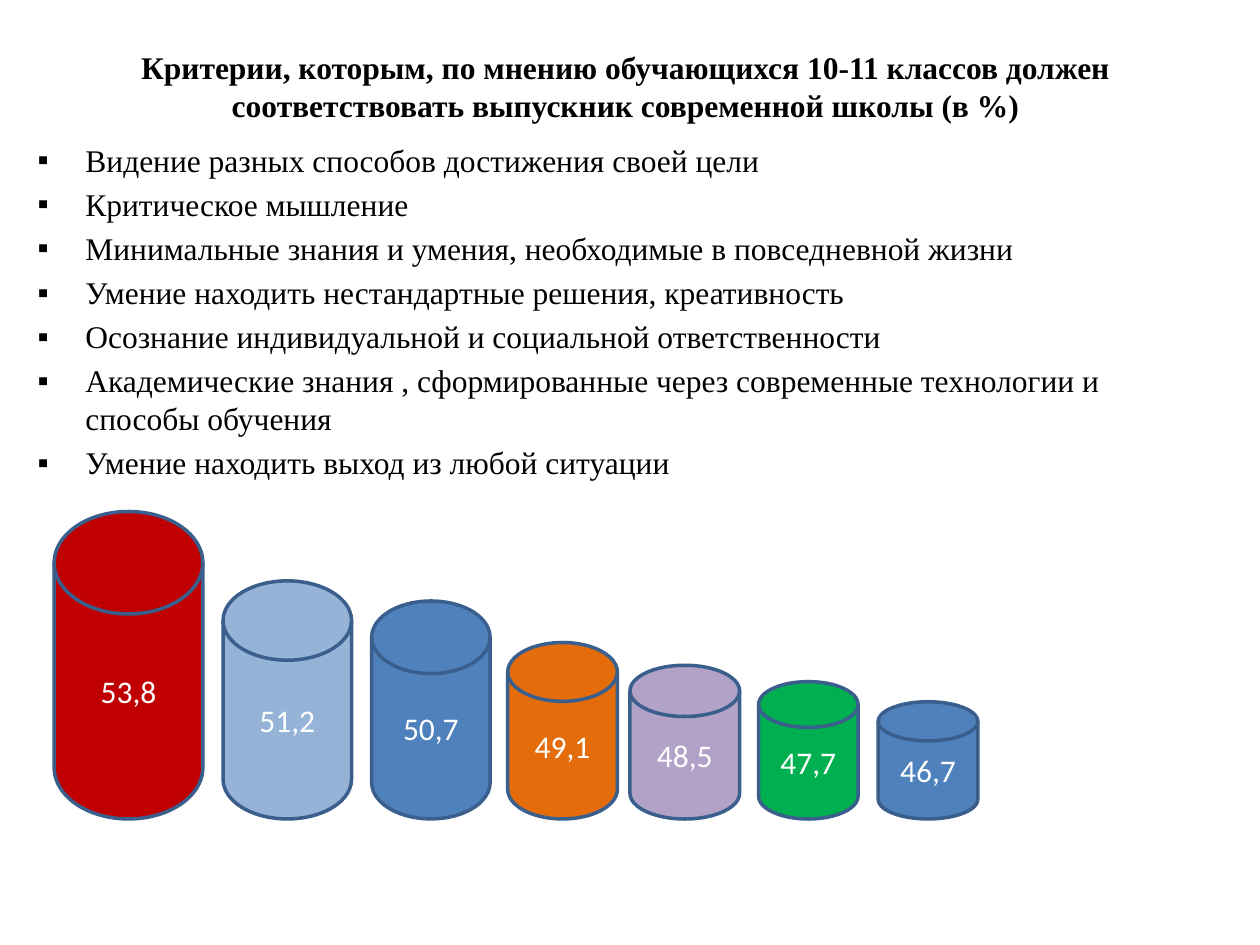
from dataclasses import dataclass
from lxml.etree import SubElement
from pptx import Presentation
from pptx.dml.color import RGBColor as RGB
from pptx.enum.shapes import MSO_SHAPE as Shape
from pptx.enum.text import MSO_ANCHOR as Anchor, PP_ALIGN as Align
from pptx.oxml.ns import qn
from pptx.util import Inches, Pt


@dataclass(frozen=True)
class Theme:
    ink: str = "000000"
    light: str = "FFFFFF"
    outline: str = "3A5F8C"
    serif: str = "Times New Roman"
    sans: str = "Calibri"
    size: int = 18
    line: int = 2
    space: float = 3.6


class Deck:
    """Builds slides on a grid of 100 columns by 75 rows."""

    def __init__(self, theme):
        self.theme = theme
        self.prs = Presentation()
        self.prs.slide_width, self.prs.slide_height = Inches(10), Inches(7.5)
        self.s = self.prs.slides.add_slide(self.prs.slide_layouts[6])

    def box(self, col, row, cols, rows):
        w, h = self.prs.slide_width / 100, self.prs.slide_height / 75
        return [round(v) for v in (col * w, row * h, cols * w, rows * h)]

    def add_text(self, p, text, color, **fmt):
        r = p.add_run()
        r.text = text
        for key, value in {"size": Pt(self.theme.size), **fmt}.items():
            setattr(r.font, key, value)
        r.font.color.rgb = RGB.from_string(color)

    def frame(self, sp, anchor):
        tf = sp.text_frame
        for key, value in {"word_wrap": True, "vertical_anchor": anchor}.items():
            setattr(tf, key, value)
        return tf

    def title(self, text, *at):
        tf = self.frame(self.s.shapes.add_textbox(*self.box(*at)), Anchor.MIDDLE)
        p = tf.paragraphs[0]
        p.alignment = Align.CENTER
        self.add_text(p, text, self.theme.ink, name=self.theme.serif, bold=True)

    def bullets(self, items, *at):
        tf = self.frame(self.s.shapes.add_textbox(*self.box(*at)), Anchor.TOP)
        for i, item in enumerate(items):
            p = tf.add_paragraph() if i else tf.paragraphs[0]
            p.space_before = Pt(self.theme.space)
            pPr = p._p.get_or_add_pPr()
            pPr.set("marL", str(Inches(0.38)))
            pPr.set("indent", str(-Inches(0.38)))
            SubElement(pPr, qn("a:buFont")).set("typeface", "Arial")
            SubElement(pPr, qn("a:buChar")).set("char", "▪")
            self.add_text(p, item, self.theme.ink, name=self.theme.serif)

    def cylinder(self, text, fill, *at):
        sp = self.s.shapes.add_shape(Shape.FLOWCHART_MAGNETIC_DISK, *self.box(*at))
        sp.shadow.inherit = False
        sp.fill.solid()
        sp.fill.fore_color.rgb = RGB.from_string(fill)
        sp.line.color.rgb = RGB.from_string(self.theme.outline)
        sp.line.width = Pt(self.theme.line)
        p = self.frame(sp, Anchor.MIDDLE).paragraphs[0]
        p.alignment = Align.CENTER
        self.add_text(p, text, self.theme.light, name=self.theme.sans)


TITLE = ("Критерии, которым, по мнению обучающихся 10-11 классов должен "
         "соответствовать выпускник современной школы (в %)")
CRITERIA = [
    "Видение разных способов достижения своей цели",
    "Критическое мышление",
    "Минимальные знания и умения, необходимые в повседневной жизни",
    "Умение находить нестандартные решения, креативность",
    "Осознание индивидуальной и социальной ответственности",
    "Академические знания , сформированные через современные технологии "
    "и способы обучения",
    "Умение находить выход из любой ситуации",
]
BASELINE = 65
CYLINDERS = [
    ("53,8", "C00000", 4.3, 11.8, 24.4),
    ("51,2", "95B3D7", 17.7, 10.2, 18.9),
    ("50,7", "4F81BD", 29.5, 9.4, 17.3),
    ("49,1", "E46C0A", 40.3, 8.7, 14),
    ("48,5", "B3A2C7", 50, 8.7, 12.2),
    ("47,7", "00B050", 60.2, 7.9, 10.9),
    ("46,7", "4F81BD", 69.7, 7.9, 9.3),
]


def main():
    deck = Deck(Theme())
    deck.title(TITLE, 8.3, 3, 82.7, 7.7)
    deck.bullets(CRITERIA, 2, 10.7, 93, 56.3)
    for text, fill, col, cols, rows in CYLINDERS:
        deck.cylinder(text, fill, col, BASELINE - rows, cols, rows)
    deck.prs.save("out.pptx")


if __name__ == "__main__":
    main()
